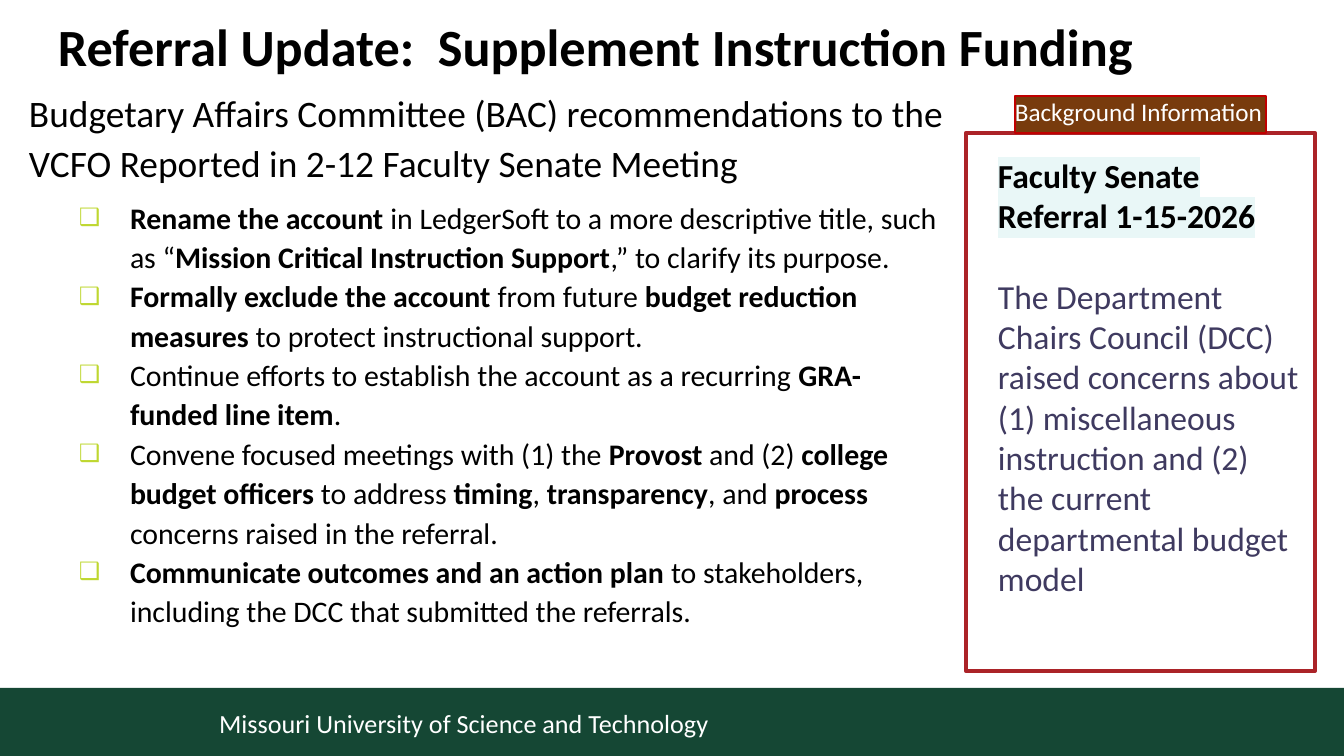
from dataclasses import dataclass, field

from lxml.etree import SubElement
from pptx import Presentation
from pptx.dml.color import RGBColor
from pptx.enum.shapes import MSO_SHAPE as Preset
from pptx.enum.text import MSO_ANCHOR as Anchor, PP_ALIGN as Align
from pptx.oxml.ns import qn
from pptx.util import Emu, Pt

PX = 914400 / 134.4
FONT = "Calibri"
BLACK, WHITE = "000000", "FFFFFF"


@dataclass
class Para:
    """One paragraph; asterisks switch bold on and off."""
    text: str
    size: float
    color: str = BLACK
    layout: dict = field(default_factory=dict)
    bullet: bool = False
    highlight: str = ""


@dataclass
class Block:
    """A text box or a rectangle, in px."""
    left: int
    top: int
    width: int
    height: int
    paras: list[Para] = field(default_factory=list)
    insets: tuple[int, int, int, int] = (0, 0, 0, 0)
    anchor: Anchor = Anchor.TOP
    is_panel: bool = False
    fill: str = ""
    line: str = ""
    line_width: float = 0


def px(length: int) -> Emu:
    return Emu(round(length * PX))


def rgb(value: str) -> RGBColor:
    return RGBColor.from_string(value)


def add_bullet(paragraph) -> None:
    props = paragraph._p.get_or_add_pPr()
    props.set("marL", str(px(101)))
    props.set("indent", str(-px(51)))
    color = SubElement(props, qn("a:buClr"))
    SubElement(color, qn("a:srgbClr"), val="BFD730")
    SubElement(props, qn("a:buSzPct"), val="80000")
    SubElement(props, qn("a:buFont"), typeface=FONT)
    SubElement(props, qn("a:buChar"), char="❑")


def add_highlight(run, color: str) -> None:
    props = run._r.get_or_add_rPr()
    highlight = SubElement(props, qn("a:highlight"))
    SubElement(highlight, qn("a:srgbClr"), val=color)
    props.find(qn("a:solidFill")).addnext(highlight)


def write_paragraph(paragraph, para: Para) -> None:
    if para.bullet:
        add_bullet(paragraph)
    for name, value in ({"alignment": Align.LEFT} | para.layout).items():
        setattr(paragraph, name, value)
    for index, part in enumerate(para.text.split("*")):
        if not part:
            continue
        run = paragraph.add_run()
        run.text = part
        formats = {"name": FONT, "size": Pt(para.size), "bold": index % 2 == 1}
        for name, value in formats.items():
            setattr(run.font, name, value)
        run.font.color.rgb = rgb(para.color)
        if para.highlight:
            add_highlight(run, para.highlight)


def draw_block(slide, block: Block) -> None:
    bounds = [px(n) for n in (block.left, block.top, block.width, block.height)]
    if block.is_panel:
        shape = slide.shapes.add_shape(Preset.RECTANGLE, *bounds)
        shape.shadow.inherit = False
        if block.fill:
            shape.fill.solid()
            shape.fill.fore_color.rgb = rgb(block.fill)
        else:
            shape.fill.background()
        if block.line:
            shape.line.color.rgb = rgb(block.line)
            shape.line.width = Pt(block.line_width)
        else:
            shape.line.fill.background()
    else:
        shape = slide.shapes.add_textbox(*bounds)
    if not block.paras:
        return
    frame = shape.text_frame
    margins = ("margin_left", "margin_top", "margin_right", "margin_bottom")
    formats = {"word_wrap": True, "vertical_anchor": block.anchor}
    formats |= {name: px(n) for name, n in zip(margins, block.insets)}
    for name, value in formats.items():
        setattr(frame, name, value)
    for index, para in enumerate(block.paras):
        paragraph = frame.add_paragraph() if index else frame.paragraphs[0]
        write_paragraph(paragraph, para)


RECOMMENDATIONS = [
    "*Rename the account *in LedgerSoft to a more descriptive title, such as "
    "“*Mission Critical Instruction Support*,” to clarify its purpose.",
    "*Formally exclude the account *from future *budget reduction measures *"
    "to protect instructional support.",
    "Continue efforts to establish the account as a recurring "
    "*GRA-funded line item*.",
    "Convene focused meetings with (1) the *Provost* and (2) "
    "*college budget officers *to address *timing*, *transparency*, and "
    "*process* concerns raised in the referral.",
    "*Communicate outcomes and an action plan *to stakeholders, including "
    "the DCC that submitted the referrals.",
]
LOOSE = {"line_spacing": 1.1}
TEXT_INSETS = (13, 7, 13, 7)

recommendation_paras = [
    Para(text, 16, layout=LOOSE | {"space_before": Pt(0 if index else 6)}, bullet=True)
    for index, text in enumerate(RECOMMENDATIONS)
]

BLOCKS = [
    # Footer band
    Block(0, 688, 1344, 68, is_panel=True, fill="154734"),
    # Title
    Block(58, 21, 1228, 86, [
        Para("*Referral Update:  Supplement Instruction Funding*", 28,
             layout={"line_spacing": 0.9})]),
    # Committee recommendations
    Block(29, 86, 918, 609, [
        Para("Budgetary Affairs Committee (BAC) recommendations to the VCFO "
             "Reported in 2-12 Faculty Senate Meeting", 20, layout=LOOSE),
        *recommendation_paras]),
    # Footer text
    Block(206, 696, 853, 54, [
        Para("Missouri University of Science and Technology", 14, WHITE)],
        TEXT_INSETS, Anchor.MIDDLE),
    # Background frame, its label and its text
    Block(966, 133, 349, 538, is_panel=True, line="AB2328", line_width=2.25),
    Block(1015, 96, 251, 37, [Para("Background Information", 13.5, WHITE)],
          (0, 0, 0, 7), Anchor.MIDDLE, True, "783B0D", "C00000", 0.75),
    Block(985, 148, 329, 461, [
        Para("*Faculty Senate Referral 1-15-2026*", 18, highlight="E9F7F7"),
        Para("The Department Chairs Council (DCC) raised concerns about "
             "(1) miscellaneous instruction and (2) the current departmental "
             "budget model", 18, "3F3A60", {"space_before": Pt(21.5)})],
        TEXT_INSETS),
]


def main() -> None:
    deck = Presentation()
    deck.slide_width, deck.slide_height = px(1344), px(756)
    slide = deck.slides.add_slide(deck.slide_layouts[6])
    for block in BLOCKS:
        draw_block(slide, block)
    deck.save("out.pptx")


if __name__ == "__main__":
    main()
